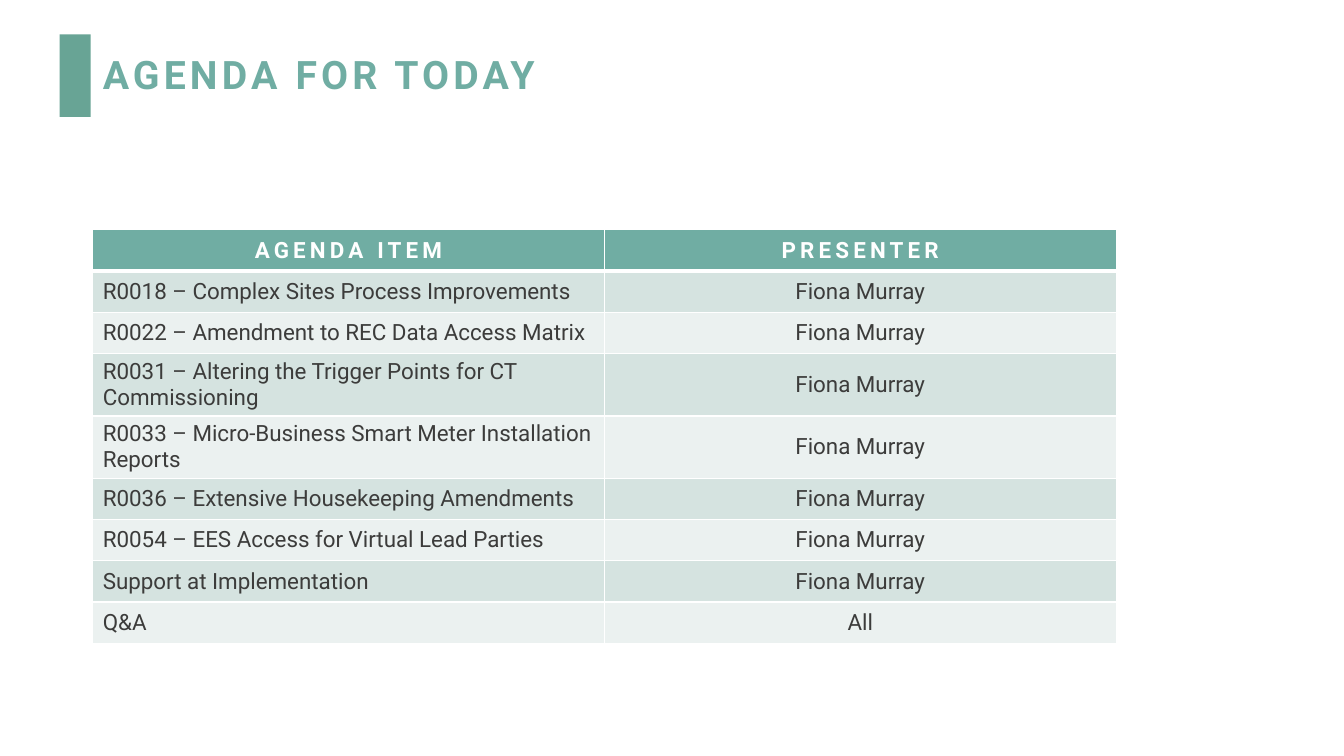
from lxml import etree
from pptx import Presentation
from pptx.dml.color import RGBColor
from pptx.enum.shapes import MSO_SHAPE as Shape
from pptx.enum.text import MSO_ANCHOR as Anchor, MSO_AUTO_SIZE as AutoSize, PP_ALIGN as Align
from pptx.oxml.ns import qn
from pptx.util import Inches, Pt

# Content
TITLE = "AGENDA FOR TODAY"
HEADINGS = ("AGENDA ITEM", "PRESENTER")
AGENDA = [
    ("R0018 – Complex Sites Process Improvements", "Fiona Murray"),
    ("R0022 – Amendment to REC Data Access Matrix", "Fiona Murray"),
    ("R0031 – Altering the Trigger Points for CT Commissioning", "Fiona Murray"),
    ("R0033 – Micro-Business Smart Meter Installation Reports", "Fiona Murray"),
    ("R0036 – Extensive Housekeeping Amendments", "Fiona Murray"),
    ("R0054 – EES Access for Virtual Lead Parties", "Fiona Murray"),
    ("Support at Implementation", "Fiona Murray"),
    ("Q&A", "All"),
]

# Style
FONT = "Roboto"
GREEN, BAR, WHITE, INK = "70ADA3", "68A495", "FFFFFF", "3C3C3B"
BANDS = ("D5E3E0", "EBF1F0")
LEFT, WIDTH, TABLE_TOP, ROW_HEIGHT = 0.92, 10.15, 2.28, 0.41


def color(value):
    return RGBColor.from_string(value)


def style_text(frame, text, size, ink, bold, align, spacing=0):
    frame.text = text
    para = frame.paragraphs[0]
    para.alignment = align
    font = para.font
    font.name, font.size, font.bold = FONT, Pt(size), bold
    font.color.rgb = color(ink)
    if spacing:
        para.runs[0].font._element.set("spc", str(spacing * 100))
    return para


def add_borders(cell, bottom):
    properties = cell._tc.get_or_add_tcPr()
    for side, width in (("L", 1), ("R", 1), ("T", 1), ("B", bottom)):
        line = etree.SubElement(properties, qn("a:ln" + side), w=str(Pt(width)))
        fill = etree.SubElement(line, qn("a:solidFill"))
        etree.SubElement(fill, qn("a:srgbClr"), val=WHITE)


deck = Presentation()
deck.slide_width, deck.slide_height = Inches(13.33), Inches(7.5)
page = deck.slides.add_slide(deck.slide_layouts[5])

# Accent bar
bar = page.shapes.add_shape(Shape.RECTANGLE, Inches(0.59), Inches(0.34), Inches(0.31), Inches(0.82))
bar.shadow.inherit = False
bar.fill.solid()
bar.fill.fore_color.rgb = color(BAR)
bar.line.fill.background()

# Title
title = page.shapes.title
title.left, title.top = Inches(LEFT), Inches(0.4)
title.width, title.height = Inches(WIDTH), Inches(0.72)
frame = title.text_frame
frame.auto_size = AutoSize.NONE
frame.word_wrap = True
frame.vertical_anchor = Anchor.MIDDLE
style_text(frame, TITLE, 28, GREEN, True, Align.LEFT, 3).line_spacing = 0.9

# Agenda table
rows = [HEADINGS] + AGENDA
table = page.shapes.add_table(
    len(rows), len(HEADINGS), Inches(LEFT), Inches(TABLE_TOP),
    Inches(WIDTH), Inches(ROW_HEIGHT * len(rows))).table
for row_index, row in enumerate(rows):
    table.rows[row_index].height = Inches(ROW_HEIGHT)
    heading = row_index == 0
    for column, text in enumerate(row):
        cell = table.cell(row_index, column)
        # The heavy rule under the headings belongs to the header row
        add_borders(cell, 3 if heading else 1)
        cell.fill.solid()
        cell.fill.fore_color.rgb = color(GREEN if heading else BANDS[(row_index - 1) % 2])
        cell.vertical_anchor = Anchor.MIDDLE
        align = Align.CENTER if heading or column else Align.LEFT
        style_text(cell.text_frame, text, 16, WHITE if heading else INK,
                   heading, align, 3 if heading else 0)

deck.save("out.pptx")
